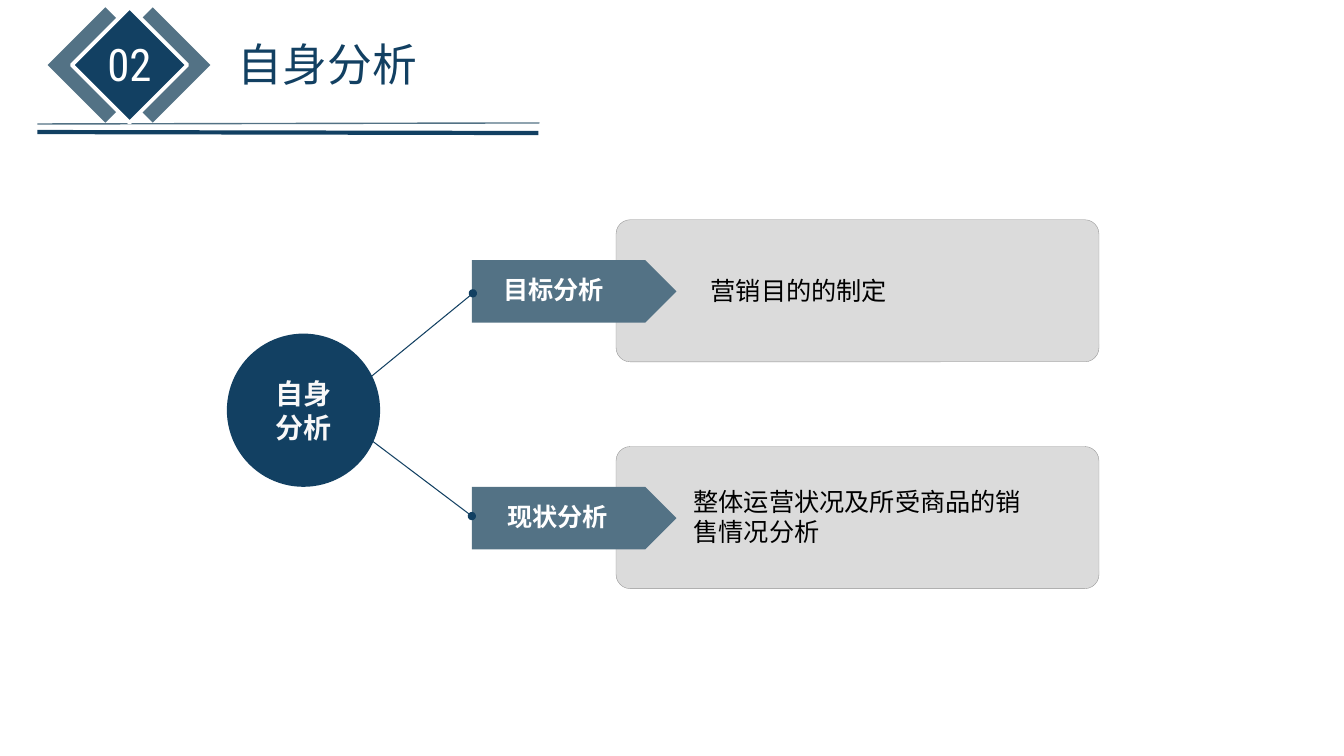
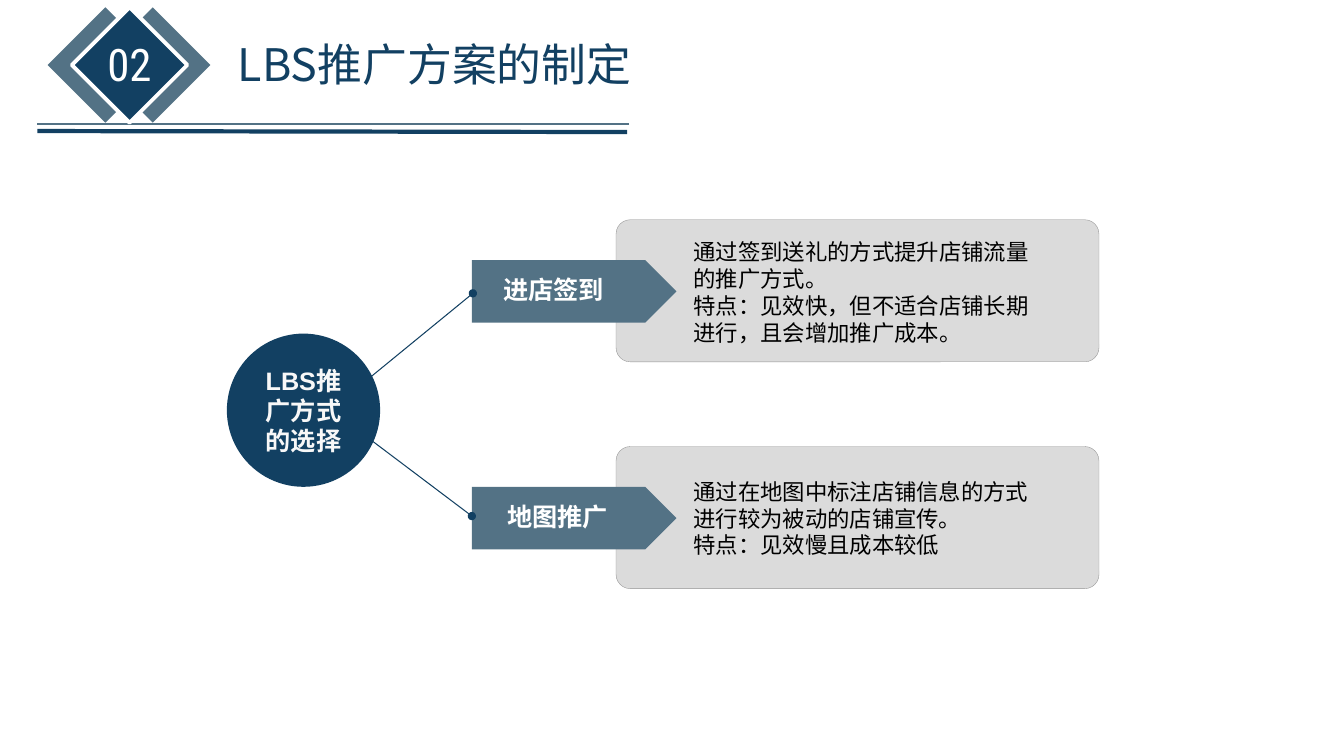
from lxml.etree import SubElement
from pptx import Presentation
from pptx.dml.color import RGBColor
from pptx.enum.shapes import MSO_CONNECTOR, MSO_SHAPE as Shape
from pptx.enum.text import MSO_ANCHOR as Anchor, PP_ALIGN as Align
from pptx.oxml.ns import qn
from pptx.util import Inches, Pt

COLORS = {
    "navy": "124062", "slate": "537285", "panel": "DBDBDB", "edge": "949494",
    "white": "FFFFFF", "pale": "F8F8F8", "black": "000000",
}
CJK_FONT = "Noto Sans CJK SC"
ROW_TOP, ROW_STEP = 2.18, 2.25

SLIDES = [
    {
        "title": "自身分析",
        "thin_rule": (5.35, 1.22, 0.37, 1.23),
        "thick_rule": (5.34, 1.32, 0.37, 1.31),
        "hub": ["自身", "分析"],
        "hub_size": 20,
        "body_size": 18,
        "branches": [
            ("目标分析", 1.38, ["营销目的的制定"], (6.95, 2.5, 2.68, 0.76)),
            ("现状分析", 1.46, ["整体运营状况及所受商品的销售情况分析"], (6.78, 4.74, 3.63, 0.76)),
        ],
    },
    {
        "title": "LBS推广方案的制定",
        "thin_rule": (6.24, 1.23, 0.37, 1.23),
        "thick_rule": (6.22, 1.31, 0.37, 1.3),
        "hub": ["LBS推广方式的选择"],
        "hub_size": 18,
        "body_size": 16,
        "branches": [
            ("进店签到", 1.38,
             ["通过签到送礼的方式提升店铺流量的推广方式。",
              "特点：见效快，但不适合店铺长期进行，且会增加推广成本。"],
             (6.78, 2.3, 3.71, 1.2)),
            ("地图推广", 1.46,
             ["通过在地图中标注店铺信息的方式进行较为被动的店铺宣传。",
              "特点：见效慢且成本较低"],
             (6.78, 4.76, 3.63, 0.76)),
        ],
    },
]


class Deck:
    """Holds the presentation style and draws on the current slide."""

    def __init__(self):
        self.prs = Presentation()
        self.prs.slide_width = Inches(13.33)
        self.prs.slide_height = Inches(7.5)
        self.slide = None

    def new_slide(self):
        self.slide = self.prs.slides.add_slide(self.prs.slide_layouts[6])

    def color(self, name):
        return RGBColor.from_string(COLORS[name])

    def shape(self, kind, box, fill, line=None, width=1, adjust=None, rotation=0):
        shape = self.slide.shapes.add_shape(kind, *map(Inches, box))
        shape.shadow.inherit = False
        shape.rotation = rotation
        shape.fill.solid()
        shape.fill.fore_color.rgb = self.color(fill)
        if line:
            shape.line.color.rgb = self.color(line)
            shape.line.width = Pt(width)
        else:
            shape.line.fill.background()
        if adjust is not None:
            shape.adjustments[0] = adjust
        return shape

    def line(self, ends, color, width, dots=False):
        line = self.slide.shapes.add_connector(MSO_CONNECTOR.STRAIGHT, *map(Inches, ends))
        line.line.color.rgb = self.color(color)
        line.line.width = Pt(width)
        properties = line._element.spPr
        if dots:
            for end in ("a:headEnd", "a:tailEnd"):
                SubElement(properties.find(qn("a:ln")), qn(end), type="oval")
        SubElement(properties, qn("a:effectLst"))

    def set_text(self, frame, lines, size, color, font="Arial", bold=False,
                 align=Align.LEFT, anchor=Anchor.MIDDLE):
        frame.word_wrap = True
        frame.vertical_anchor = anchor
        for index, words in enumerate(lines):
            paragraph = frame.add_paragraph() if index else frame.paragraphs[0]
            paragraph.text = words
            paragraph.alignment = align
            paragraph.font.name = font
            paragraph.font.size = Pt(size)
            paragraph.font.bold = bold
            paragraph.font.color.rgb = self.color(color)
            defaults = paragraph._p.pPr.find(qn("a:defRPr"))
            SubElement(defaults, qn("a:ea"), typeface=CJK_FONT)

    def text(self, box, lines, size, color, **style):
        frame = self.slide.shapes.add_textbox(*map(Inches, box)).text_frame
        self.set_text(frame, lines, size, color, **style)

    def header(self, number, title, thin_rule, thick_rule):
        self.line(thin_rule, "slate", 1)
        for left, fill, line in ((1.11, "slate", None), (0.64, "slate", None),
                                 (0.88, "navy", "white")):
            self.shape(Shape.RECTANGLE, (left, 0.24, 0.81, 0.81), fill, line, 2.75,
                       rotation=45)
        self.text((0.95, 0.32, 0.67, 0.64), [number], 32, "white",
                  font="Roboto Condensed", align=Align.CENTER, anchor=Anchor.TOP)
        self.line(thick_rule, "navy", 3)
        self.text((2.26, 0.32, 4.44, 0.64), [title], 32, "navy",
                  font=CJK_FONT, anchor=Anchor.TOP)

    def branch(self, top, label, label_width, body, body_box, body_size):
        self.shape(Shape.ROUNDED_RECTANGLE, (6.11, top, 4.79, 1.41), "panel",
                   "edge", 0.25, adjust=0.1)
        self.text(body_box, body, body_size, "black")
        self.shape(Shape.PENTAGON, (4.68, top + 0.4, 2.03, 0.62), "slate", adjust=0.5)
        self.text((4.8, top + 0.49, label_width, 0.4), [label], 18, "white",
                  bold=True, align=Align.CENTER)

    def hub(self, lines, size):
        for ends in ((3.53, 3.86, 4.69, 2.91), (3.54, 4.26, 4.68, 5.12)):
            self.line(ends, "navy", 0.75, dots=True)
        circle = self.shape(Shape.OVAL, (2.25, 3.31, 1.52, 1.52), "navy")
        self.set_text(circle.text_frame, lines, size, "pale", bold=True, align=Align.CENTER)


def main():
    deck = Deck()
    for content in SLIDES:
        deck.new_slide()
        deck.header("02", content["title"], content["thin_rule"], content["thick_rule"])
        for row, (label, label_width, body, body_box) in enumerate(content["branches"]):
            deck.branch(ROW_TOP + row * ROW_STEP, label, label_width, body, body_box,
                        content["body_size"])
        deck.hub(content["hub"], content["hub_size"])
    deck.prs.save("out.pptx")


if __name__ == "__main__":
    main()
